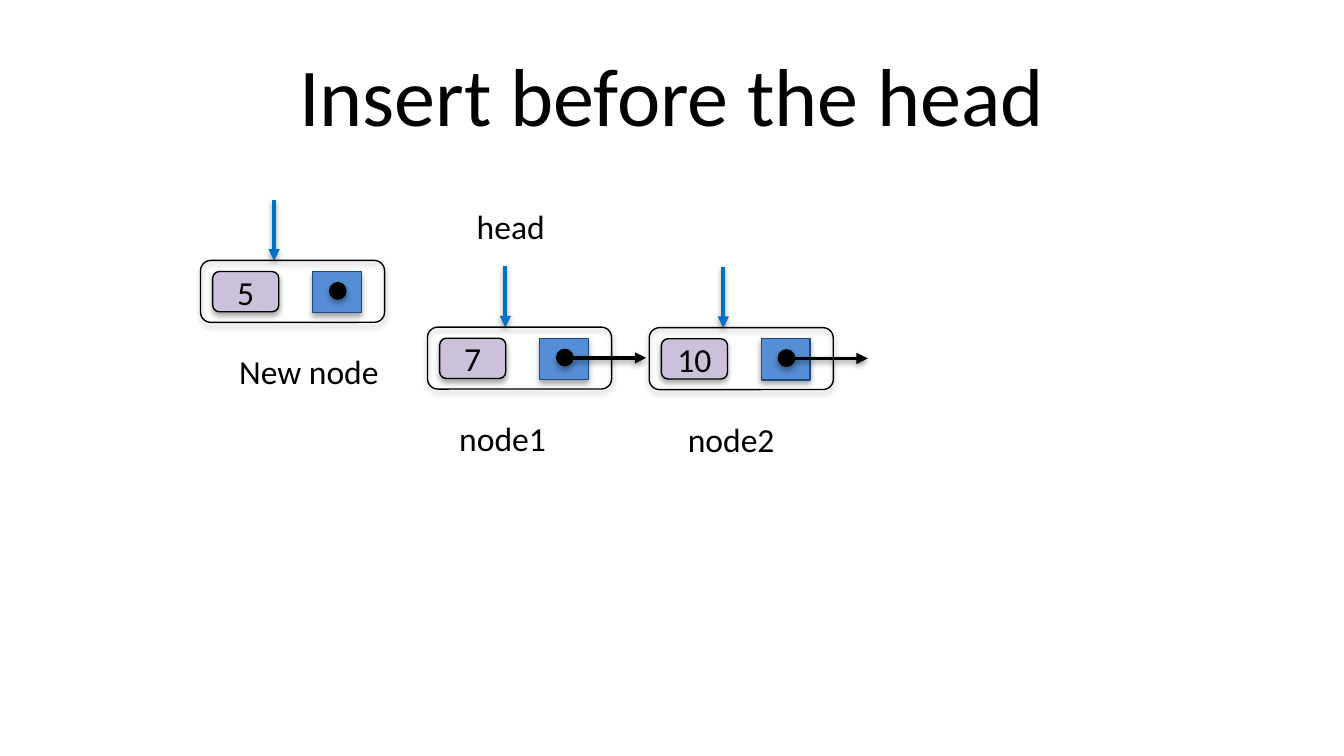
"""Build a slide that shows a new node to be inserted before the head of a linked list."""
from lxml.etree import SubElement
from pptx import Presentation
from pptx.dml.color import RGBColor
from pptx.enum.shapes import MSO_CONNECTOR, MSO_SHAPE
from pptx.enum.text import MSO_ANCHOR, MSO_AUTO_SIZE, PP_ALIGN
from pptx.oxml.ns import qn
from pptx.util import Cm, Pt

BLACK = RGBColor(0x00, 0x00, 0x00)
LILAC = RGBColor(0xCC, 0xC1, 0xDA)
BLUE = RGBColor(0x55, 0x8E, 0xD5)
NAVY = RGBColor(0x1F, 0x49, 0x7D)
ARROW_BLUE = RGBColor(0x00, 0x70, 0xC0)


class ListSlide:
    """Holds the style and the slide, and draws each kind of element."""

    font_name = "Calibri"
    text_size = Pt(18)

    def __init__(self, presentation):
        self.slide = presentation.slides.add_slide(presentation.slide_layouts[5])

    def format_text(self, frame, text, size, alignment):
        frame.text = text
        paragraph = frame.paragraphs[0]
        paragraph.alignment = alignment
        paragraph.font.name = self.font_name
        paragraph.font.size = size
        paragraph.font.color.rgb = BLACK

    def title(self, text):
        shape = self.slide.shapes.title
        shape.left, shape.top = Cm(1.27), Cm(0.58)
        shape.width, shape.height = Cm(22.86), Cm(2.39)
        shape.text_frame.vertical_anchor = MSO_ANCHOR.MIDDLE
        self.format_text(shape.text_frame, text, Pt(44), PP_ALIGN.CENTER)

    def shadow(self, shape, distance, opacity):
        effects = SubElement(shape.element.spPr, qn("a:effectLst"))
        outer = SubElement(effects, qn("a:outerShdw"), blurRad=str(Pt(3.1)),
                           dist=str(Pt(distance)), dir="5400000", rotWithShape="0")
        color = SubElement(outer, qn("a:srgbClr"), val=str(BLACK))
        SubElement(color, qn("a:alpha"), val=str(opacity * 1000))

    def box(self, shapes, kind, left, top, width, height, fill=None, line=BLACK, text=None):
        shape = shapes.add_shape(kind, Cm(left), Cm(top), Cm(width), Cm(height))
        if fill is None:
            shape.fill.background()
        else:
            shape.fill.solid()
            shape.fill.fore_color.rgb = fill
        shape.line.color.rgb = line
        shape.line.width = Pt(0.75)
        self.shadow(shape, 1.8, 35)
        if text:
            shape.text_frame.vertical_anchor = MSO_ANCHOR.MIDDLE
            self.format_text(shape.text_frame, text, self.text_size, PP_ALIGN.CENTER)

    def arrow(self, shapes, start_x, start_y, end_x, end_y, color):
        connector = shapes.add_connector(MSO_CONNECTOR.STRAIGHT, Cm(start_x), Cm(start_y),
                                         Cm(end_x), Cm(end_y))
        connector.line.color.rgb = color
        connector.line.width = Pt(2)
        SubElement(connector.element.spPr.find(qn("a:ln")), qn("a:tailEnd"), type="triangle")
        self.shadow(connector, 1.6, 38)

    def label(self, shapes, left, top, width, text):
        frame = shapes.add_textbox(Cm(left), Cm(top), Cm(width), Cm(1.02)).text_frame
        frame.word_wrap = False
        frame.auto_size = MSO_AUTO_SIZE.SHAPE_TO_FIT_TEXT
        self.format_text(frame, text, self.text_size, PP_ALIGN.LEFT)

    def node(self, left, top, value, name, name_left, name_width, arrow_x, linked=True):
        shapes = self.slide.shapes.add_group_shape().shapes
        self.arrow(shapes, arrow_x, top - 1.15, arrow_x, top, ARROW_BLUE)
        self.box(shapes, MSO_SHAPE.ROUNDED_RECTANGLE, left, top, 3.48, 1.17)
        self.box(shapes, MSO_SHAPE.ROUNDED_RECTANGLE, left + 0.23, top + 0.21, 1.25, 0.76,
                 LILAC, text=value)
        self.box(shapes, MSO_SHAPE.RECTANGLE, left + 2.12, top + 0.21, 0.92, 0.78, BLUE, NAVY)
        self.box(shapes, MSO_SHAPE.OVAL, left + 2.44, top + 0.42, 0.31, 0.31, BLACK)
        if linked:
            middle = top + 0.58
            self.arrow(shapes, left + 2.75, middle, left + 4.13, middle, BLACK)
        self.label(shapes, name_left, top + 1.59, name_width, name)


def main():
    presentation = Presentation()
    presentation.slide_width, presentation.slide_height = Cm(25.4), Cm(14.28)
    list_slide = ListSlide(presentation)
    list_slide.title("Insert before the head")
    list_slide.node(8.08, 6.18, "7", "node1", 8.43, 2.18, 9.55)
    list_slide.node(12.27, 6.19, "10", "node2", 12.75, 2.18, 13.67)
    list_slide.label(list_slide.slide.shapes, 8.76, 3.76, 1.83, "head")
    list_slide.node(3.79, 4.92, "5", "New node", 4.27, 3.18, 5.18, linked=False)
    presentation.save("out.pptx")


if __name__ == "__main__":
    main()
